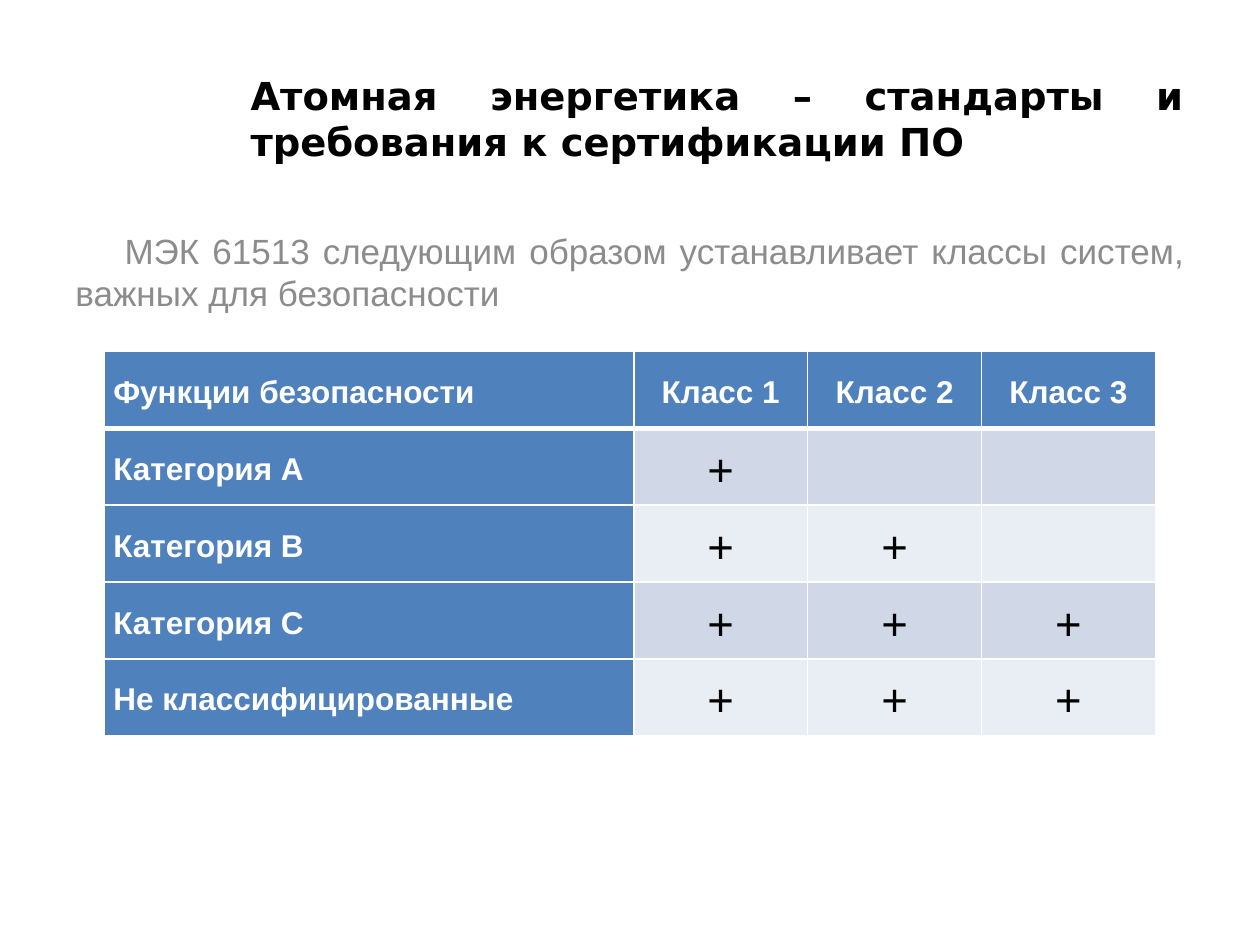
from dataclasses import dataclass

from lxml import etree
from pptx import Presentation
from pptx.dml.color import RGBColor
from pptx.enum.text import MSO_ANCHOR, PP_ALIGN
from pptx.oxml.ns import qn
from pptx.util import Inches, Length, Pt

LEFT, CENTER, JUSTIFY = PP_ALIGN.LEFT, PP_ALIGN.CENTER, PP_ALIGN.JUSTIFY
TOP, MIDDLE = MSO_ANCHOR.TOP, MSO_ANCHOR.MIDDLE

BLACK = RGBColor(0x00, 0x00, 0x00)
WHITE = RGBColor(0xFF, 0xFF, 0xFF)
GRAY = RGBColor(0x8C, 0x8C, 0x8C)
BLUE = RGBColor(0x4F, 0x81, 0xBD)
BANDS = (RGBColor(0xD0, 0xD8, 0xE8), RGBColor(0xE9, 0xED, 0xF4))


@dataclass(frozen=True)
class TextStyle:
    size: int
    color: RGBColor
    bold: bool = False
    font: str = "Arial"
    align: PP_ALIGN = LEFT


@dataclass(frozen=True)
class Category:
    name: str
    marks: int  # classes marked, counted from class 1


TITLE = TextStyle(22, BLACK, True, "DejaVu Sans", JUSTIFY)
INTRO = TextStyle(20, GRAY, align=JUSTIFY)
ROW_HEADING = TextStyle(18, WHITE, True)
CLASS_HEADING = TextStyle(18, WHITE, True, align=CENTER)
MARK = TextStyle(26, BLACK, align=CENTER)

CLASSES = ("Класс 1", "Класс 2", "Класс 3")
CATEGORIES = (
    Category("Категория А", 1),
    Category("Категория В", 2),
    Category("Категория С", 3),
    Category("Не классифицированные", 3),
)
NAME_WIDTH, CLASS_WIDTH, ROW_HEIGHT = Inches(4.2), Inches(1.38), Inches(0.61)


def write(paragraph, text: str, style: TextStyle) -> None:
    paragraph.alignment = style.align
    run = paragraph.add_run()
    run.text = text
    run.font.size = Pt(style.size)
    run.font.name = style.font
    run.font.bold = style.bold
    run.font.color.rgb = style.color


def add_text(slide, left: Length, top: Length, width: Length, height: Length,
             text: str, style: TextStyle, anchor: MSO_ANCHOR, indent: Length = 0) -> None:
    frame = slide.shapes.add_textbox(left, top, width, height).text_frame
    frame.word_wrap = True
    frame.vertical_anchor = anchor
    paragraph = frame.paragraphs[0]
    if indent:
        paragraph._p.get_or_add_pPr().set("indent", str(indent))
    write(paragraph, text, style)


def set_borders(cell, top: int, bottom: int) -> None:
    """Draw white cell borders, 1 pt at the sides; widths are in points."""
    properties = cell._tc.get_or_add_tcPr()
    widths = {"a:lnL": 1, "a:lnR": 1, "a:lnT": top, "a:lnB": bottom}
    for position, (tag, width) in enumerate(widths.items()):
        line = etree.Element(qn(tag), w=str(Pt(width)))
        fill = etree.SubElement(line, qn("a:solidFill"))
        etree.SubElement(fill, qn("a:srgbClr"), val=str(WHITE))
        properties.insert(position, line)


def fill_cell(cell, row: int, text: str, style: TextStyle, fill: RGBColor) -> None:
    cell.fill.solid()
    cell.fill.fore_color.rgb = fill
    set_borders(cell, top=3 if row == 1 else 1, bottom=3 if row == 0 else 1)
    cell.vertical_anchor = MIDDLE
    cell.margin_left = cell.margin_right = Inches(0.07)
    cell.margin_top = cell.margin_bottom = 0
    if text:
        paragraph = cell.text_frame.paragraphs[0]
        paragraph.line_spacing = 1.15
        write(paragraph, text, style)


def add_class_table(slide, left: Length, top: Length) -> None:
    row_count, column_count = len(CATEGORIES) + 1, len(CLASSES) + 1
    table = slide.shapes.add_table(
        row_count, column_count, left, top,
        NAME_WIDTH + CLASS_WIDTH * len(CLASSES), ROW_HEIGHT * row_count).table
    for index, column in enumerate(table.columns):
        column.width = CLASS_WIDTH if index else NAME_WIDTH
    for row in table.rows:
        row.height = ROW_HEIGHT

    fill_cell(table.cell(0, 0), 0, "Функции безопасности", ROW_HEADING, BLUE)
    for column, name in enumerate(CLASSES, 1):
        fill_cell(table.cell(0, column), 0, name, CLASS_HEADING, BLUE)
    for row, category in enumerate(CATEGORIES, 1):
        fill_cell(table.cell(row, 0), row, category.name, ROW_HEADING, BLUE)
        band = BANDS[(row - 1) % len(BANDS)]
        for column in range(1, column_count):
            mark = "+" if column <= category.marks else ""
            fill_cell(table.cell(row, column), row, mark, MARK, band)


def main() -> None:
    presentation = Presentation()
    presentation.slide_width, presentation.slide_height = Inches(10), Inches(7.5)
    slide = presentation.slides.add_slide(presentation.slide_layouts[6])
    add_text(slide, Inches(1.89), Inches(0.3), Inches(7.6), Inches(1.28),
             "Атомная энергетика – стандарты и требования к сертификации ПО",
             TITLE, MIDDLE)
    add_text(slide, Inches(0.5), Inches(1.77), Inches(9), Inches(0.74),
             "МЭК 61513 следующим образом устанавливает классы систем, "
             "важных для безопасности", INTRO, TOP, indent=Inches(0.39))
    add_class_table(slide, Inches(0.83), Inches(2.79))
    presentation.save("out.pptx")


if __name__ == "__main__":
    main()
